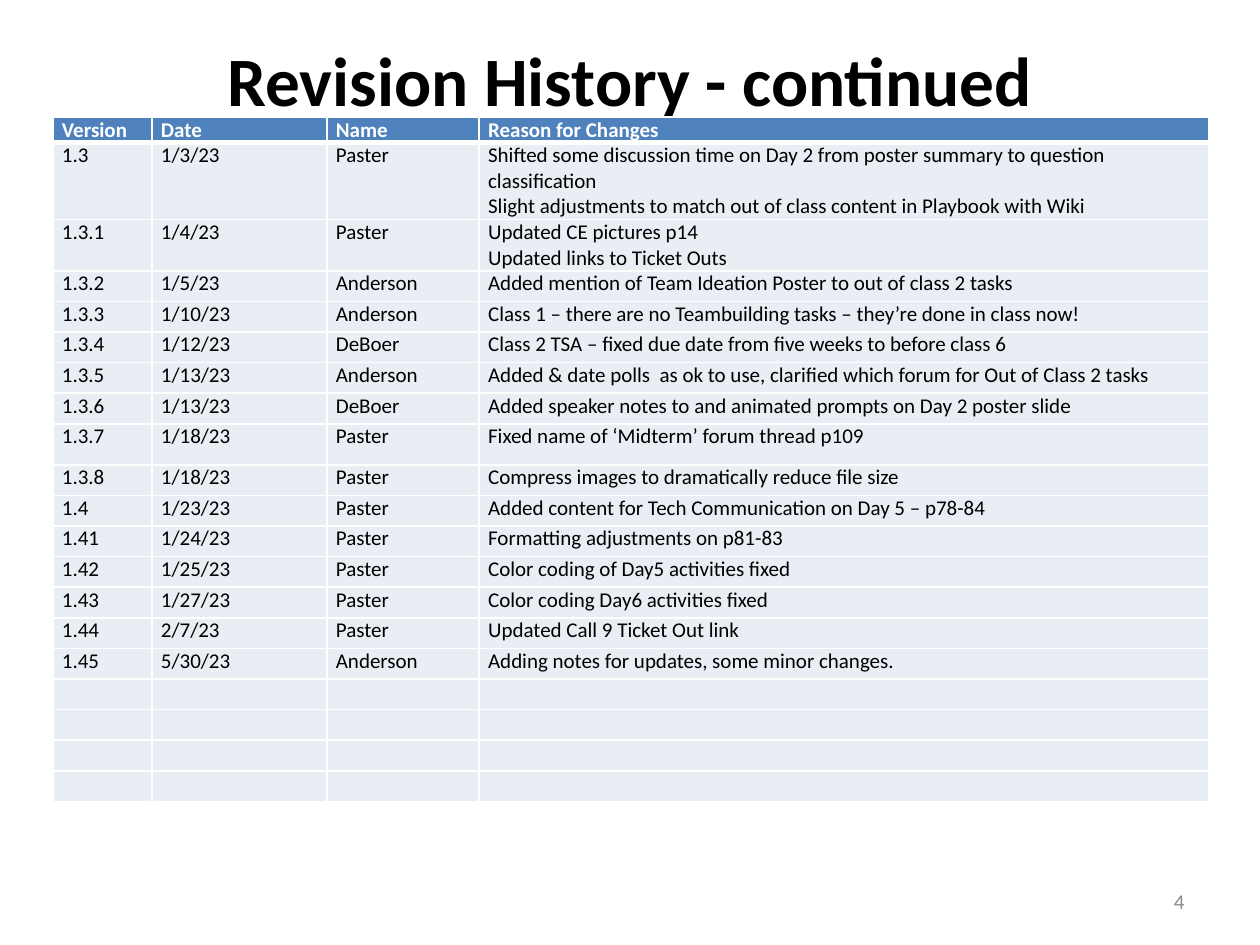
from dataclasses import dataclass

from lxml import etree
from pptx import Presentation
from pptx.dml.color import RGBColor
from pptx.enum.text import MSO_ANCHOR, PP_ALIGN
from pptx.oxml.ns import qn
from pptx.util import Pt

LEFT, CENTER, RIGHT = PP_ALIGN.LEFT, PP_ALIGN.CENTER, PP_ALIGN.RIGHT
TOP, MIDDLE = MSO_ANCHOR.TOP, MSO_ANCHOR.MIDDLE


@dataclass(frozen=True)
class Theme:
    font: str = "Calibri"
    ink: str = "000000"
    white: str = "FFFFFF"
    header: str = "4F81BD"
    body: str = "E9EDF4"
    muted: str = "8C8C8C"
    title_size: float = 39.6
    text_size: float = 12
    rule: float = 1
    header_rule: float = 3


@dataclass(frozen=True)
class Revision:
    version: str = ""
    date: str = ""
    name: str = ""
    reason: str = ""
    height: float = 17.5

    def cells(self) -> tuple[str, ...]:
        return self.version, self.date, self.name, self.reason


THEME = Theme()
COLUMN_WIDTHS = (56.6, 100, 87, 416.8)
CELL_INSET = 5.2
SPARE_ROWS = 4

HEADER = Revision("Version", "Date", "Name", "Reason for Changes", height=5)
REVISIONS = [
    Revision("1.3", "1/3/23", "Paster",
             "Shifted some discussion time on Day 2 from poster summary to question classification\n"
             "Slight adjustments to match out of class content in Playbook with Wiki", height=21.6),
    Revision("1.3.1", "1/4/23", "Paster", "Updated CE pictures p14\nUpdated links to Ticket Outs"),
    Revision("1.3.2", "1/5/23", "Anderson",
             "Added mention of Team Ideation Poster to out of class 2 tasks"),
    Revision("1.3.3", "1/10/23", "Anderson",
             "Class 1 – there are no Teambuilding tasks – they’re done in class now!"),
    Revision("1.3.4", "1/12/23", "DeBoer",
             "Class 2 TSA – fixed due date from five weeks to before class 6"),
    Revision("1.3.5", "1/13/23", "Anderson",
             "Added & date polls  as ok to use, clarified which forum for Out of Class 2 tasks"),
    Revision("1.3.6", "1/13/23", "DeBoer",
             "Added speaker notes to and animated prompts on Day 2 poster slide"),
    Revision("1.3.7", "1/18/23", "Paster", "Fixed name of ‘Midterm’ forum thread p109", height=23.4),
    Revision("1.3.8", "1/18/23", "Paster", "Compress images to dramatically reduce file size"),
    Revision("1.4", "1/23/23", "Paster", "Added content for Tech Communication on Day 5 – p78-84"),
    Revision("1.41", "1/24/23", "Paster", "Formatting adjustments on p81-83"),
    Revision("1.42", "1/25/23", "Paster", "Color coding of Day5 activities fixed"),
    Revision("1.43", "1/27/23", "Paster", "Color coding Day6 activities fixed"),
    Revision("1.44", "2/7/23", "Paster", "Updated Call 9 Ticket Out link"),
    Revision("1.45", "5/30/23", "Anderson", "Adding notes for updates, some minor changes."),
]


def write(tf, text: str, *, size: float = THEME.text_size, color: str = THEME.ink,
          bold: bool = False, align=LEFT) -> None:
    """Fill a text frame, one paragraph per line of text."""
    tf.word_wrap = True
    for i, line in enumerate(text.split("\n")):
        p = tf.paragraphs[0] if i == 0 else tf.add_paragraph()
        p.alignment = align
        if not line:
            # An empty cell still needs its type size, which sets the row height
            etree.SubElement(p._p, qn("a:endParaRPr"), sz=str(round(size * 100)))
            continue
        r = p.add_run()
        r.text = line
        r.font.name, r.font.size, r.font.bold = THEME.font, Pt(size), bold
        r.font.color.rgb = RGBColor.from_string(color)


def set_borders(cell, top: float, bottom: float) -> None:
    tc_pr = cell._tc.get_or_add_tcPr()
    widths = {"lnL": THEME.rule, "lnR": THEME.rule, "lnT": top, "lnB": bottom}
    for tag, width in widths.items():
        ln = etree.SubElement(tc_pr, qn(f"a:{tag}"), w=str(Pt(width)))
        fill = etree.SubElement(ln, qn("a:solidFill"))
        etree.SubElement(fill, qn("a:srgbClr"), val=THEME.white)


def format_cell(cell, text: str, row: int) -> None:
    is_header = row == 0
    cell.margin_left = cell.margin_right = Pt(CELL_INSET)
    cell.margin_top = cell.margin_bottom = Pt(0)
    cell.vertical_anchor = TOP
    set_borders(cell, top=THEME.header_rule if row == 1 else THEME.rule,
                bottom=THEME.header_rule if is_header else THEME.rule)
    cell.fill.solid()
    cell.fill.fore_color.rgb = RGBColor.from_string(THEME.header if is_header else THEME.body)
    write(cell.text_frame, text, bold=is_header, color=THEME.white if is_header else THEME.ink)


def add_title(s, text: str) -> None:
    sp = s.shapes.title
    sp.left, sp.top, sp.width, sp.height = Pt(36), Pt(21.6), Pt(648), Pt(90)
    tf = sp.text_frame
    tf.vertical_anchor = MIDDLE
    # The deep bottom inset lifts the title clear of the table
    tf.margin_top, tf.margin_bottom = Pt(0), Pt(43)
    write(tf, text, size=THEME.title_size, bold=True, align=CENTER)


def add_history(s, rows: list[Revision]) -> None:
    frame = s.shapes.add_table(len(rows), len(COLUMN_WIDTHS), Pt(30.2), Pt(66.9),
                               Pt(sum(COLUMN_WIDTHS)), Pt(389.5))
    table = frame.table
    table.horz_banding = False
    for column, width in zip(table.columns, COLUMN_WIDTHS):
        column.width = Pt(width)
    for i, revision in enumerate(rows):
        table.rows[i].height = Pt(revision.height)
        for j, text in enumerate(revision.cells()):
            format_cell(table.cell(i, j), text, i)


def add_page_number(s, number: str) -> None:
    sp = s.shapes.add_textbox(Pt(516), Pt(500.5), Pt(168), Pt(28.8))
    sp.text_frame.vertical_anchor = MIDDLE
    write(sp.text_frame, number, color=THEME.muted, align=RIGHT)


def main() -> None:
    prs = Presentation()
    prs.slide_width, prs.slide_height = Pt(720), Pt(540)
    s = prs.slides.add_slide(prs.slide_layouts.get_by_name("Title Only"))
    add_title(s, "Revision History - continued")
    add_history(s, [HEADER, *REVISIONS, *[Revision()] * SPARE_ROWS])
    add_page_number(s, "4")
    prs.save("out.pptx")


if __name__ == "__main__":
    main()
